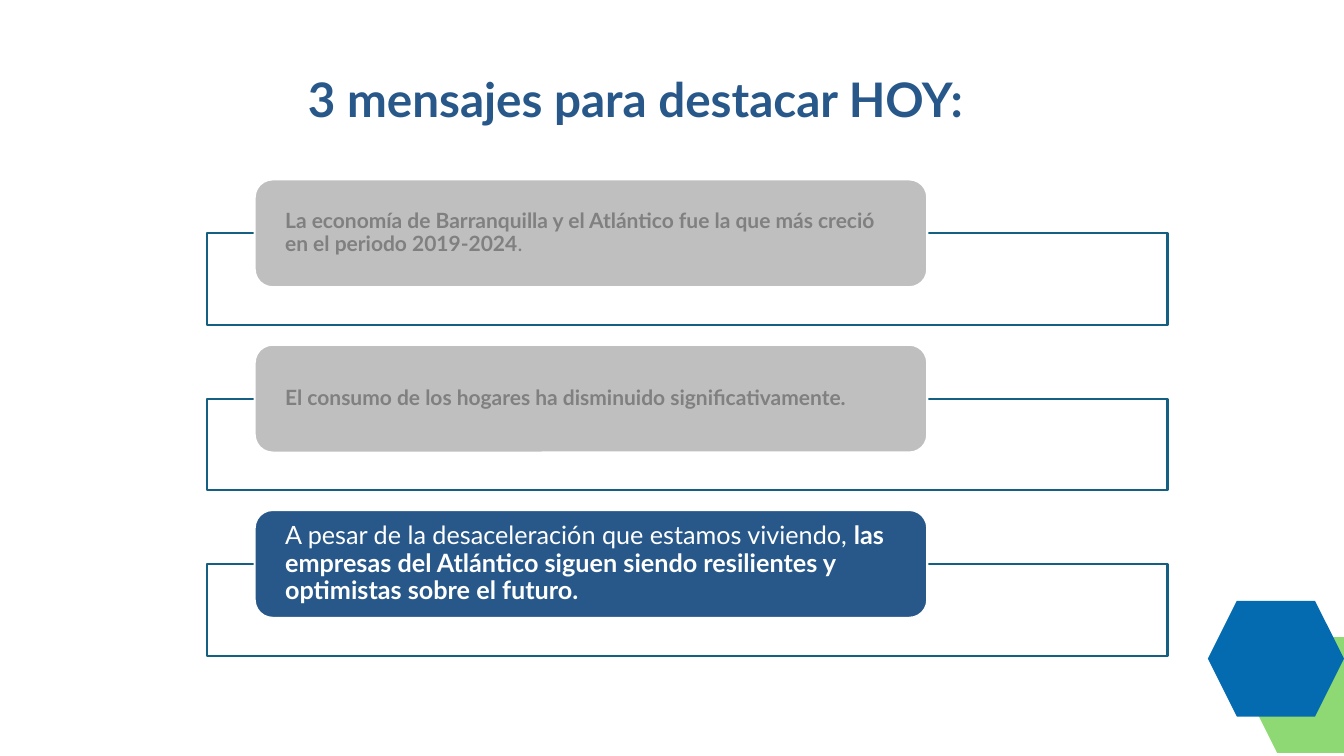
from dataclasses import dataclass

from pptx import Presentation
from pptx.dml.color import RGBColor
from pptx.enum.shapes import MSO_SHAPE as Shape
from pptx.enum.text import MSO_ANCHOR as Anchor, PP_ALIGN as Align
from pptx.util import Inches, Pt


@dataclass(frozen=True)
class Theme:
    font: str = "Lato"
    white: str = "FFFFFF"
    navy: str = "275889"
    frame: str = "156082"
    muted_fill: str = "BFBFBF"
    muted_text: str = "808080"
    blue: str = "056BB0"
    green: str = "8ED973"
    title_size: int = 34
    muted_size: int = 15
    focus_size: int = 18
    line_width: float = 1.5


THEME = Theme()

# Each message: text runs with their bold flag, and whether it is in focus
MESSAGES = [
    ([("La economía de Barranquilla y el Atlántico fue la que más creció "
       "en el periodo 2019-2024", True), (".", False)], False),
    ([("El consumo de los hogares ha disminuido significativamente.", True)], False),
    ([("A pesar de la desaceleración que estamos viviendo, ", False),
      ("las empresas del Atlántico siguen siendo resilientes y optimistas "
       "sobre el futuro.", True)], True),
]


def add_block(slide, kind, box, fill, line=None):
    block = slide.shapes.add_shape(kind, *map(Inches, box))
    block.shadow.inherit = False
    block.fill.solid()
    block.fill.fore_color.rgb = RGBColor.from_string(fill)
    if line:
        block.line.color.rgb = RGBColor.from_string(line)
        block.line.width = Pt(THEME.line_width)
    else:
        block.line.fill.background()
    return block


def add_run(paragraph, text, size, color, bold):
    run = paragraph.add_run()
    run.text = text
    for name, value in {"name": THEME.font, "size": Pt(size), "bold": bold}.items():
        setattr(run.font, name, value)
    run.font.color.rgb = RGBColor.from_string(color)


def add_hexagons(slide, left, top):
    """Corner decoration: the blue hexagon overlaps the green one."""
    width, height, shift = 1.35, 1.15, 0.4
    for offset, color in ((shift, THEME.green), (0, THEME.blue)):
        box = (left + offset, top + offset * 0.9, width, height)
        add_block(slide, Shape.HEXAGON, box, color)


def add_title(slide, box, text):
    frame = slide.shapes.add_textbox(*map(Inches, box)).text_frame
    frame.word_wrap = True
    heading = frame.paragraphs[0]
    heading.alignment = Align.CENTER
    add_run(heading, text, THEME.title_size, THEME.navy, True)


def add_message(slide, left, top, width, runs, in_focus):
    """A label overlapping the top edge of an outlined frame."""
    label_height, frame_height = 1.07, 0.91
    if in_focus:
        fill, color, size = THEME.navy, THEME.white, THEME.focus_size
    else:
        fill, color, size = THEME.muted_fill, THEME.muted_text, THEME.muted_size

    # Outlined frame
    frame_box = (left, top + label_height / 2, width, frame_height)
    add_block(slide, Shape.RECTANGLE, frame_box, THEME.white, THEME.frame)

    # Label with its text
    label_box = (left + width * 0.05, top, width * 0.7, label_height)
    label = add_block(slide, Shape.ROUNDED_RECTANGLE, label_box, fill, THEME.white)
    layout = {
        "word_wrap": True, "vertical_anchor": Anchor.MIDDLE,
        "margin_left": Inches(0.25), "margin_right": Inches(0.25),
        "margin_top": 0, "margin_bottom": 0,
    }
    for name, value in layout.items():
        setattr(label.text_frame, name, value)
    message = label.text_frame.paragraphs[0]
    message.alignment = Align.LEFT
    message.line_spacing = 0.9
    for text, bold in runs:
        add_run(message, text, size, color, bold)


def add_messages(slide, left, top, width, pitch):
    for index, (runs, in_focus) in enumerate(MESSAGES):
        add_message(slide, left, top + index * pitch, width, runs, in_focus)


def main():
    deck = Presentation()
    deck.slide_width, deck.slide_height = Inches(13.33), Inches(7.5)
    slide = deck.slides.add_slide(deck.slide_layouts[6])
    add_hexagons(slide, left=11.98, top=5.96)
    add_title(slide, (2.39, 0.64, 7.94, 0.7), "3 mensajes para destacar HOY: ")
    add_messages(slide, left=2.05, top=1.78, width=9.53, pitch=1.64)
    deck.save("out.pptx")


if __name__ == "__main__":
    main()
